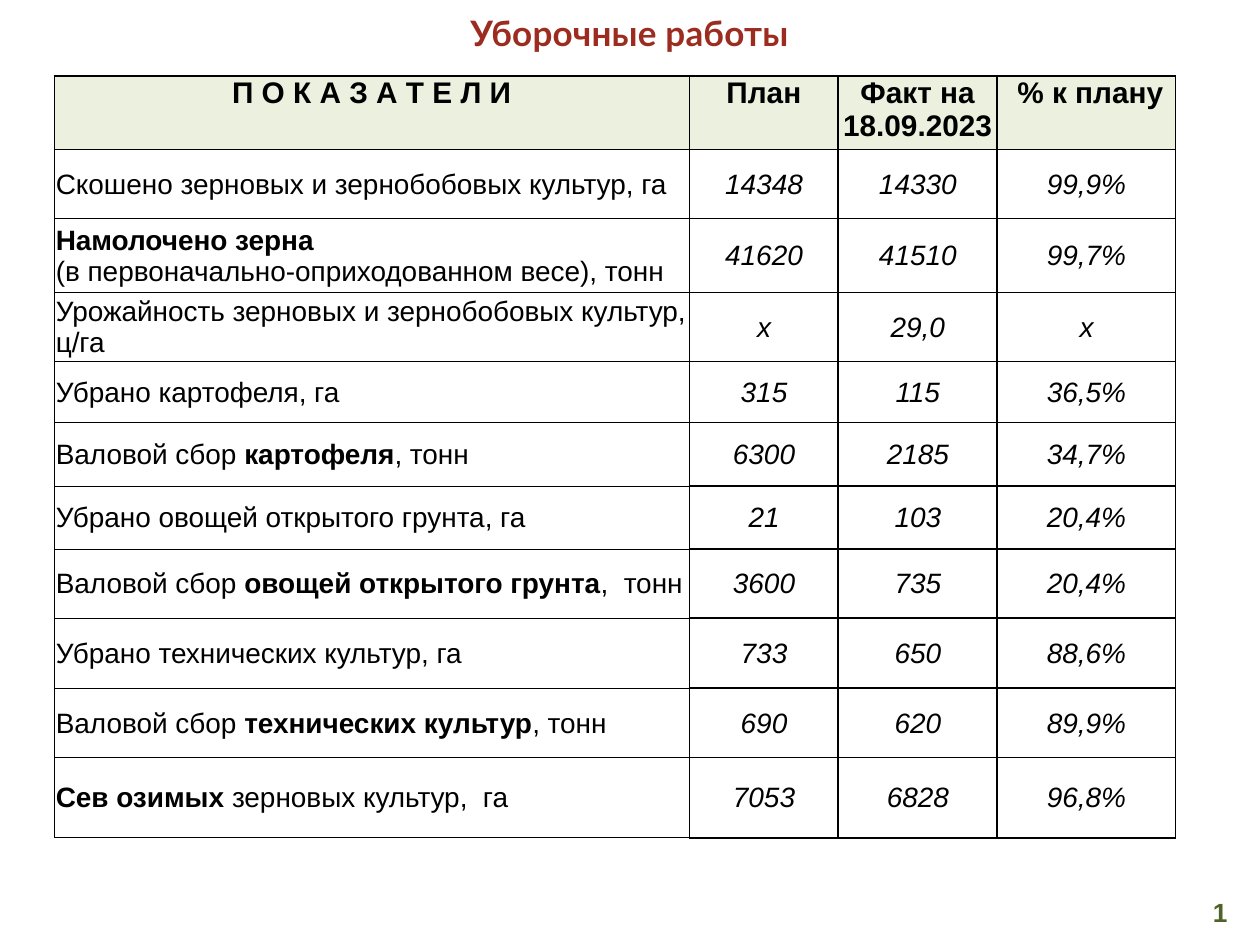
from lxml import etree
from pptx import Presentation
from pptx.dml.color import RGBColor
from pptx.enum import text
from pptx.oxml import ns
from pptx.util import Pt

COLORS = {"title": "9C2C1F", "header": "EBF1DE", "body": "FFFFFF",
          "ink": "000000", "number": "4F6228"}
TITLE = "Уборочные работы"
PAGE_NUMBER = "1"
HEADINGS = ["П О К А З А Т Е Л И", "План", "Факт на 18.09.2023", " % к плану"]
# Indicator as (plain, bold, plain) parts, then plan, fact and percentage
INDICATORS = [
    (("Скошено зерновых и зернобобовых культур, га", "", ""), "14348", "14330", "99,9%"),
    (("", "Намолочено зерна", "\n(в первоначально-оприходованном весе), тонн"),
     "41620", "41510", "99,7%"),
    (("Урожайность зерновых и зернобобовых культур, ц/га", "", ""), "х", "29,0", "х"),
    (("Убрано картофеля, га", "", ""), "315", "115", "36,5%"),
    (("Валовой сбор ", "картофеля", ", тонн"), "6300", "2185", "34,7%"),
    (("Убрано овощей открытого грунта, га", "", ""), "21", "103", "20,4%"),
    (("Валовой сбор ", "овощей открытого грунта", ",  тонн"), "3600", "735", "20,4%"),
    (("Убрано технических культур, га", "", ""), "733", "650", "88,6%"),
    (("Валовой сбор ", "технических культур", ", тонн"), "690", "620", "89,9%"),
    (("", "Сев озимых ", "зерновых культур,  га"), "7053", "6828", "96,8%"),
]
COLUMN_WIDTHS = [363, 85, 90.8, 102]
ROW_HEIGHTS = [42, 39.5, 42.2, 39.5, 35, 36.3, 36, 39.5, 40, 39.5, 46]
TABLE_LEFT, TABLE_TOP = 31, 43.4


def style(font, size, color, bold=False, italic=False, name="Arial"):
    font.name, font.size, font.bold, font.italic = name, Pt(size), bold, italic
    font.color.rgb = RGBColor.from_string(COLORS[color])


def set_margins(target, left, top, right, bottom):
    target.margin_left, target.margin_top = Pt(left), Pt(top)
    target.margin_right, target.margin_bottom = Pt(right), Pt(bottom)


def set_borders(cell, **widths):
    """Draw cell borders; the keywords L, R, T and B give widths in points."""
    properties = cell._tc.get_or_add_tcPr()
    for side in "LRTB":
        line = etree.SubElement(properties, ns.qn(f"a:ln{side}"), w=str(Pt(widths[side])))
        fill = etree.SubElement(line, ns.qn("a:solidFill"))
        etree.SubElement(fill, ns.qn("a:srgbClr"), val=COLORS["ink"])


def write_indicator(paragraph, parts):
    for index, part in enumerate(parts):
        if part.startswith("\n"):
            paragraph.add_line_break()
        if part:
            run = paragraph.add_run()
            run.text = part.strip("\n")
            style(run.font, 16, "ink", bold=index == 1)


def fill_cell(cell, content, row, column):
    is_header = row == 0
    is_indicator = column == 0 and not is_header
    paragraph = cell.text_frame.paragraphs[0]
    if is_indicator:
        write_indicator(paragraph, content)
        set_borders(cell, L=0.5, R=1, T=1 if row == 1 else 0.5, B=0.5)
    else:
        paragraph.text = content
        paragraph.alignment = text.PP_ALIGN.CENTER
        style(paragraph.runs[0].font, 17 if is_header else 16, "ink",
              bold=is_header, italic=not is_header)
        set_borders(cell, L=1, R=1, T=1, B=1)
    if is_header:
        set_margins(cell, 0, 0, 0, 0)
        cell.vertical_anchor = text.MSO_ANCHOR.TOP
    else:
        set_margins(cell, 0.9, 0.7, 0.7, 0)
        cell.vertical_anchor = text.MSO_ANCHOR.MIDDLE
    cell.fill.solid()
    cell.fill.fore_color.rgb = RGBColor.from_string(COLORS["header" if is_header else "body"])


def add_indicator_table(slide):
    rows = [HEADINGS, *INDICATORS]
    table = slide.shapes.add_table(
        len(rows), len(HEADINGS), Pt(TABLE_LEFT), Pt(TABLE_TOP),
        Pt(sum(COLUMN_WIDTHS)), Pt(sum(ROW_HEIGHTS))).table
    table.first_row = table.horz_banding = False
    for column, width in zip(table.columns, COLUMN_WIDTHS):
        column.width = Pt(width)
    for row, height in zip(table.rows, ROW_HEIGHTS):
        row.height = Pt(height)
    for r, contents in enumerate(rows):
        for c, content in enumerate(contents):
            fill_cell(table.cell(r, c), content, r, c)


def write_centred(frame, words, size, color, name):
    frame.text = words
    frame.word_wrap = True
    frame.auto_size = text.MSO_AUTO_SIZE.NONE
    frame.vertical_anchor = text.MSO_ANCHOR.MIDDLE
    paragraph = frame.paragraphs[0]
    paragraph.alignment = text.PP_ALIGN.CENTER
    style(paragraph.runs[0].font, size, color, bold=True, name=name)


def format_title(title):
    title.left, title.top, title.width, title.height = Pt(9.5), Pt(-2.5), Pt(700.5), Pt(42)
    outline = etree.SubElement(title._element.spPr, ns.qn("a:prstGeom"), prst="roundRect")
    etree.SubElement(outline, ns.qn("a:avLst"))
    write_centred(title.text_frame, TITLE, 20, "title", "Lato")
    set_margins(title.text_frame, 3.6, 2, 3.6, 2)
    letters = title.text_frame.paragraphs[0].runs[0].font
    letters._element.set("spc", "10")


def main():
    deck = Presentation()
    deck.slide_width, deck.slide_height = Pt(720), Pt(540)
    slide = deck.slides.add_slide(deck.slide_layouts[5])

    format_title(slide.shapes.title)
    add_indicator_table(slide)

    number = slide.shapes.add_textbox(Pt(681), Pt(504), Pt(32.5), Pt(34))
    write_centred(number.text_frame, PAGE_NUMBER, 15, "number", "Arial")

    deck.save("out.pptx")


if __name__ == "__main__":
    main()
